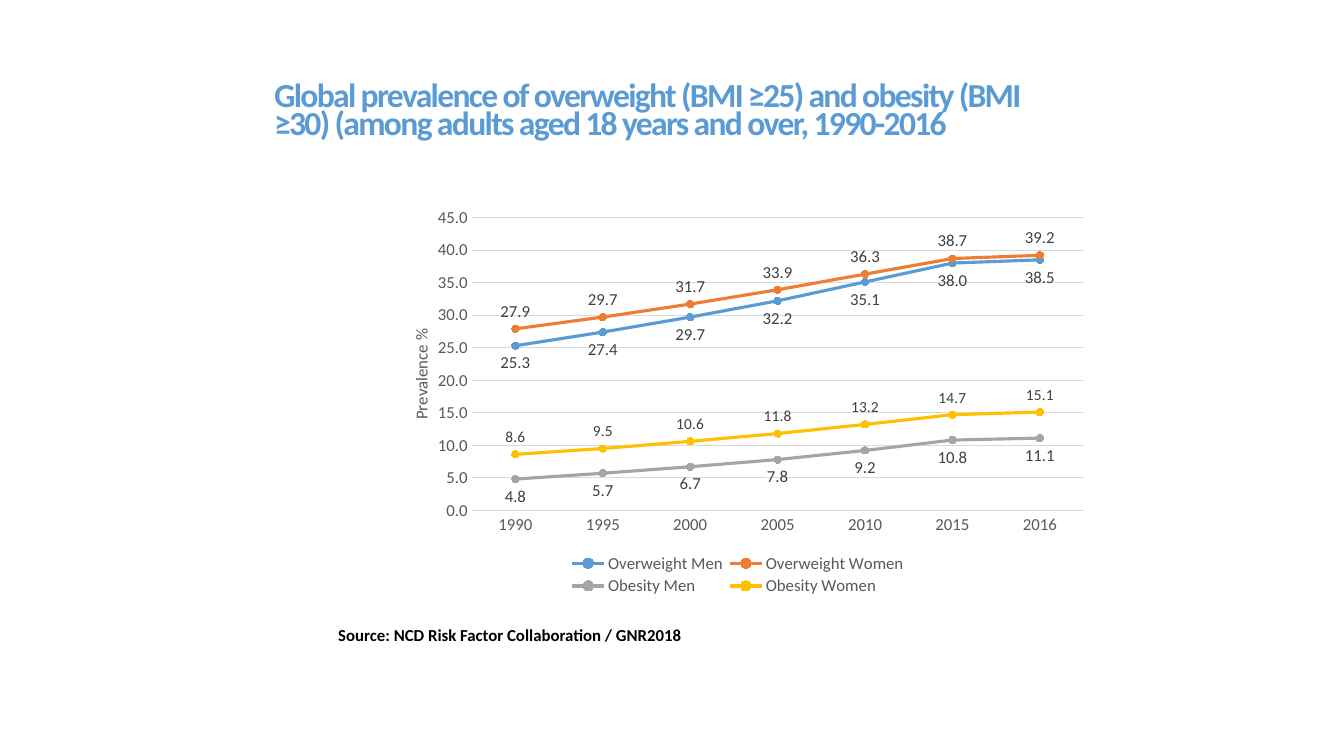
import pptx
import pptx.util
import pptx.chart.data
import pptx.dml.color
import pptx.enum.chart
import pptx.enum.text
import pptx.oxml
import pptx.oxml.ns
from pptx.util import Inches

THEME = {
    "font": "Calibri",
    "title": "5B9BD5", "ink": "000000", "axis": "595959", "label": "404040", "grid": "D9D9D9",
    "title_size": 24, "text_size": 12, "small_size": 11, "chart_size": 10,
}
YEARS = ["1990", "1995", "2000", "2005", "2010", "2015", "2016"]
BELOW = pptx.enum.chart.XL_LABEL_POSITION.BELOW
ABOVE = pptx.enum.chart.XL_LABEL_POSITION.ABOVE
SERIES = [
    ("Overweight Men", "5B9BD5", BELOW, THEME["text_size"], [25.3, 27.4, 29.7, 32.2, 35.1, 38.0, 38.5]),
    ("Overweight Women", "ED7D31", ABOVE, THEME["text_size"], [27.9, 29.7, 31.7, 33.9, 36.3, 38.7, 39.2]),
    ("Obesity Men", "A5A5A5", BELOW, THEME["text_size"], [4.8, 5.7, 6.7, 7.8, 9.2, 10.8, 11.1]),
    ("Obesity Women", "FFC000", ABOVE, THEME["small_size"], [8.6, 9.5, 10.6, 11.8, 13.2, 14.7, 15.1]),
]


def write(target, text=None, size=12, color="000000", bold=False, spacing=None):
    font = target
    if text is not None:
        span = target.add_run()
        span.text = text
        font = span.font
        if spacing is not None:
            span._r.get_or_add_rPr().set("spc", str(spacing))
    font.name = THEME["font"]
    font.size = pptx.util.Pt(size)
    font.bold = bold
    font.color.rgb = pptx.dml.color.RGBColor.from_string(color)


def place(element, index, **fractions):
    for old in element.findall(pptx.oxml.ns.qn("c:layout")):
        element.remove(old)
    inner = '<c:layoutTarget val="inner"/>' if element.tag.endswith("plotArea") else ""
    modes = "".join(f'<c:{key}Mode val="edge"/>' for key in "xy")
    values = "".join(f'<c:{key} val="{value}"/>' for key, value in fractions.items())
    element.insert(index, pptx.oxml.parse_xml(
        f'<c:layout {pptx.oxml.ns.nsdecls("c")}><c:manualLayout>{inner}{modes}{values}'
        "</c:manualLayout></c:layout>"))


deck = pptx.Presentation()
deck.slide_width, deck.slide_height = Inches(13.33), Inches(7.5)
page = deck.slides.add_slide(deck.slide_layouts[6])

title_box = page.shapes.add_textbox(Inches(2.62), Inches(0.76), Inches(8.06), Inches(0.72)).text_frame
title_box.word_wrap = True
title_box.vertical_anchor = pptx.enum.text.MSO_ANCHOR.MIDDLE
title_para = title_box.paragraphs[0]
title_para.line_spacing = 0.7
write(title_para, "Global prevalence of overweight (BMI ≥25) and obesity (BMI ≥30) "
      "(among adults aged 18 years and over, 1990-2016",
      size=THEME["title_size"], color=THEME["title"], bold=True, spacing=-120)

data = pptx.chart.data.CategoryChartData(number_format="0.0")
data.categories = YEARS
for name, color, position, size, values in SERIES:
    data.add_series(name, values)
chart = page.shapes.add_chart(
    pptx.enum.chart.XL_CHART_TYPE.LINE_MARKERS,
    Inches(3.75), Inches(2), Inches(7.14), Inches(3.98), data).chart
write(chart.font, size=THEME["chart_size"], color=THEME["ink"])
chart.has_title = False
chart.plots[0].vary_by_categories = False

for series, (name, color, position, size, values) in zip(chart.plots[0].series, SERIES):
    tint = pptx.dml.color.RGBColor.from_string(color)
    series.smooth = False
    series.format.line.color.rgb = tint
    series.format.line.width = pptx.util.Pt(2.25)
    series.marker.style = pptx.enum.chart.XL_MARKER_STYLE.CIRCLE
    series.marker.size = 5
    series.marker.format.fill.solid()
    series.marker.format.fill.fore_color.rgb = tint
    series.marker.format.line.color.rgb = tint
    labels = series.data_labels
    labels.show_value = True
    labels.number_format = "0.0"
    labels.number_format_is_linked = False
    labels.position = position
    write(labels.font, size=size, color=THEME["label"])

years, prevalence = chart.category_axis, chart.value_axis
for axis in (years, prevalence):
    axis.major_tick_mark = pptx.enum.chart.XL_TICK_MARK.NONE
    axis.minor_tick_mark = pptx.enum.chart.XL_TICK_MARK.NONE
    write(axis.tick_labels.font, size=THEME["text_size"], color=THEME["axis"])
prevalence.has_major_gridlines = True
for line in (years.format.line, prevalence.major_gridlines.format.line):
    line.color.rgb = pptx.dml.color.RGBColor.from_string(THEME["grid"])
    line.width = pptx.util.Pt(0.75)
prevalence.format.line.fill.background()
prevalence.minimum_scale, prevalence.maximum_scale, prevalence.major_unit = 0, 45, 5
prevalence.tick_labels.number_format = "0.0"
prevalence.tick_labels.number_format_is_linked = False
write(prevalence.axis_title.text_frame.paragraphs[0], "Prevalence %",
      size=THEME["text_size"], color=THEME["axis"])

chart.has_legend = True
chart.legend.position = pptx.enum.chart.XL_LEGEND_POSITION.BOTTOM
chart.legend.include_in_layout = False
write(chart.legend.font, size=THEME["text_size"], color=THEME["axis"])

place(chart._chartSpace.chart.plotArea, 0, x=0.13, y=0.04, w=0.85, h=0.73)
place(prevalence.axis_title._element, 1, x=0.04, y=0.31)
place(chart.legend._element, 1, x=0.26, y=0.87, w=0.48, h=0.12)

source_box = page.shapes.add_textbox(Inches(2.75), Inches(6.15), Inches(4.11), Inches(0.29)).text_frame
source_box.word_wrap = True
source_para = source_box.paragraphs[0]
source_para.alignment = pptx.enum.text.PP_ALIGN.RIGHT
write(source_para, "Source: NCD Risk Factor Collaboration / GNR2018",
      size=THEME["text_size"], color=THEME["ink"], bold=True)

deck.save("out.pptx")
